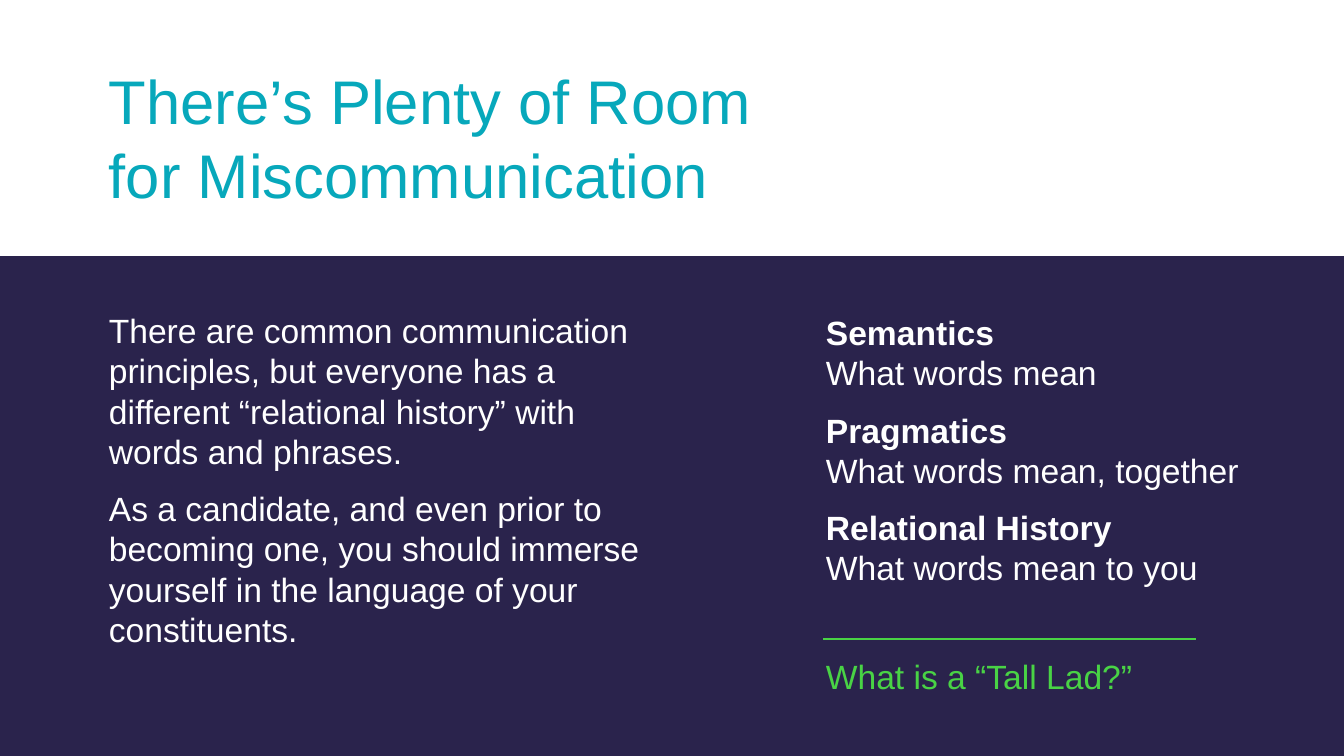
import pptx
import pptx.util
import pptx.dml.color
import pptx.enum.shapes
import pptx.oxml.ns
import lxml.etree

PX = 914400 / 100.8
WHITE, NAVY, TEAL, GREEN = "FFFFFF", "2A234C", "07A8BB", "49D345"


def color(value):
    return pptx.dml.color.RGBColor.from_string(value)


def add_text(box, paragraphs, size, value, gap=0):
    tf = s.shapes.add_textbox(*[round(n * PX) for n in box]).text_frame
    tf.word_wrap = True
    for i, runs in enumerate(paragraphs):
        p = tf.paragraphs[0] if i == 0 else tf.add_paragraph()
        p.space_before = pptx.util.Pt(gap)
        for j, (text, bold) in enumerate(runs):
            if j:
                p.add_line_break()
            r = p.add_run()
            r.text = text
            r.font.name = "Arial"
            r.font.size = pptx.util.Pt(size)
            r.font.bold = bold
            r.font.color.rgb = color(value)


prs = pptx.Presentation()
prs.slide_width = round(1344 * PX)
prs.slide_height = round(756 * PX)
s = prs.slides.add_slide(prs.slide_layouts[6])

add_text((99, 58, 717, 159), [[("There’s Plenty of Room for Miscommunication", False)]], 44, TEAL)

sp = s.shapes.add_shape(pptx.enum.shapes.MSO_SHAPE.RECTANGLE, 0, round(256 * PX), prs.slide_width, round(500 * PX))
sp.shadow.inherit = False
sp.fill.solid()
sp.fill.fore_color.rgb = color(NAVY)
sp.line.fill.background()

advice = [
    "There are common communication principles, but everyone has a different “relational history” with words and phrases.",
    "As a candidate, and even prior to becoming one, you should immerse yourself in the language of your constituents.",
]
add_text((99, 305, 561, 392), [[(text, False)] for text in advice], 24, WHITE, 12)

terms = [
    ("Semantics", "What words mean"),
    ("Pragmatics", "What words mean, together"),
    ("Relational History", "What words mean to you"),
]
add_text((816, 307, 500, 320), [[(term, True), (meaning, False)] for term, meaning in terms], 24, WHITE, 12)

add_text((816, 651, 500, 50), [[("What is a “Tall Lad?”", False)]], 24, GREEN)

line = s.shapes.add_connector(
    pptx.enum.shapes.MSO_CONNECTOR.STRAIGHT, *[round(n * PX) for n in (823, 639, 1196, 639)])
line.line.color.rgb = color(GREEN)
line.line.width = pptx.util.Pt(1.5)
lxml.etree.SubElement(line._element.spPr, pptx.oxml.ns.qn("a:effectLst"))

prs.save("out.pptx")
